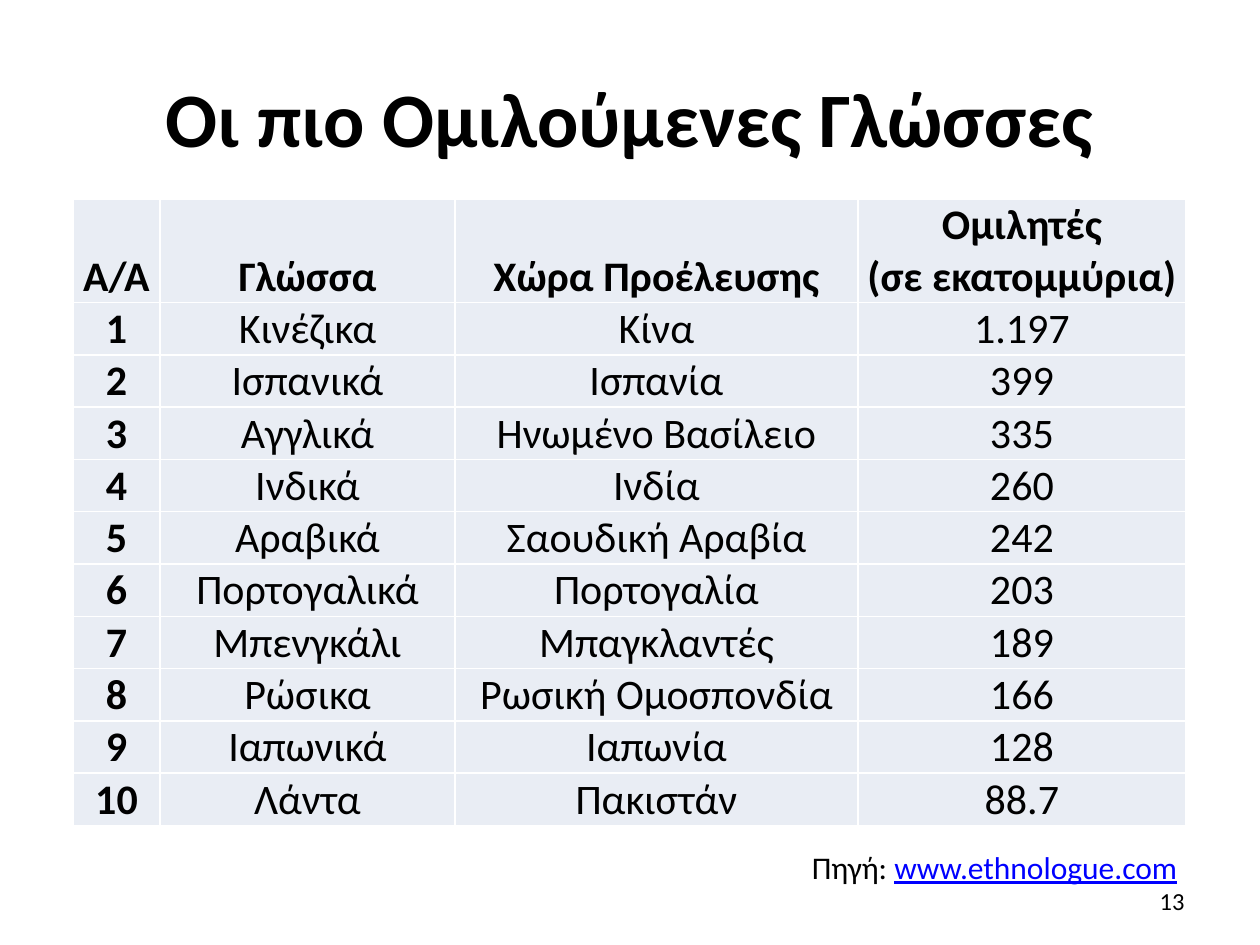
from lxml.etree import SubElement
from pptx import Presentation
from pptx.dml.color import RGBColor
from pptx.enum.text import MSO_ANCHOR, PP_ALIGN
from pptx.oxml.ns import qn
from pptx.util import Pt

PX = 914400 / 126
COLORS = {"text": "000000", "link": "0000FF", "cell": "E9EDF4", "border": "FFFFFF"}


def px(*lengths):
    return [round(length * PX) for length in lengths]


def write(para, text, size=24, bold=False, color="text", underline=False, align=PP_ALIGN.CENTER):
    para.alignment = align
    span = para.add_run()
    span.text = text
    font = span.font
    font.name, font.size, font.bold, font.underline = "Calibri", Pt(size), bold, underline
    font.color.rgb = RGBColor.from_string(COLORS[color])


deck = Presentation()
deck.slide_width, deck.slide_height = px(1260, 945)
page = deck.slides.add_slide(deck.slide_layouts[5])

# Title
title = page.shapes.title
title.left, title.top, title.width, title.height = px(63, 38, 1134, 157)
title.text_frame.vertical_anchor = MSO_ANCHOR.MIDDLE
write(title.text_frame.paragraphs[0], "Οι πιο Ομιλούμενες Γλώσσες", size=44, bold=True)

# Table of languages
HEADER = ["Α/Α", "Γλώσσα", "Χώρα Προέλευσης", "Ομιλητές\n(σε εκατομμύρια)"]
LANGUAGES = [
    ("Κινέζικα", "Κίνα", "1.197"),
    ("Ισπανικά", "Ισπανία", "399"),
    ("Αγγλικά", "Ηνωμένο Βασίλειο", "335"),
    ("Ινδικά", "Ινδία", "260"),
    ("Αραβικά", "Σαουδική Αραβία", "242"),
    ("Πορτογαλικά", "Πορτογαλία", "203"),
    ("Μπενγκάλι", "Μπαγκλαντές", "189"),
    ("Ρώσικα", "Ρωσική Ομοσπονδία", "166"),
    ("Ιαπωνικά", "Ιαπωνία", "128"),
    ("Λάντα", "Πακιστάν", "88.7"),
]
rows = [HEADER] + [(str(rank), *language) for rank, language in enumerate(LANGUAGES, 1)]
widths = px(87, 295, 403, 328)
heights = px(101, *[50] * len(LANGUAGES))
table = page.shapes.add_table(len(rows), len(widths), *px(73, 199), sum(widths), sum(heights)).table
table.first_row = table.horz_banding = False
for column, width in zip(table.columns, widths):
    column.width = width

for row_index, values in enumerate(rows):
    table.rows[row_index].height = heights[row_index]
    for column_index, value in enumerate(values):
        cell = table.cell(row_index, column_index)
        cell.margin_left, cell.margin_right, cell.margin_top, cell.margin_bottom = px(1, 1, 1, 0)
        cell.vertical_anchor = MSO_ANCHOR.BOTTOM
        frame = cell.text_frame
        for line_index, line in enumerate(value.split("\n")):
            para = frame.add_paragraph() if line_index else frame.paragraphs[0]
            write(para, line, bold=row_index == 0 or column_index == 0)
        # Borders come before the fill in the cell properties
        properties = cell._tc.get_or_add_tcPr()
        for side in ("a:lnL", "a:lnR", "a:lnT", "a:lnB"):
            border = SubElement(properties, qn(side), w=str(Pt(1)))
            SubElement(SubElement(border, qn("a:solidFill")), qn("a:srgbClr"), val=COLORS["border"])
        cell.fill.solid()
        cell.fill.fore_color.rgb = RGBColor.from_string(COLORS["cell"])

# Source line and page number
FOOTERS = [
    ((378, 840, 819, 53), 18, [("Πηγή: ", {}),
                               ("www.ethnologue.com", {"color": "link", "underline": True}),
                               (" ", {})]),
    ((903, 876, 294, 50), 14, [("13", {})]),
]
for place, size, spans in FOOTERS:
    box = page.shapes.add_textbox(*px(*place))
    box.text_frame.word_wrap = True
    box.text_frame.vertical_anchor = MSO_ANCHOR.MIDDLE
    for text, look in spans:
        write(box.text_frame.paragraphs[0], text, size=size, align=PP_ALIGN.RIGHT, **look)

deck.save("out.pptx")
